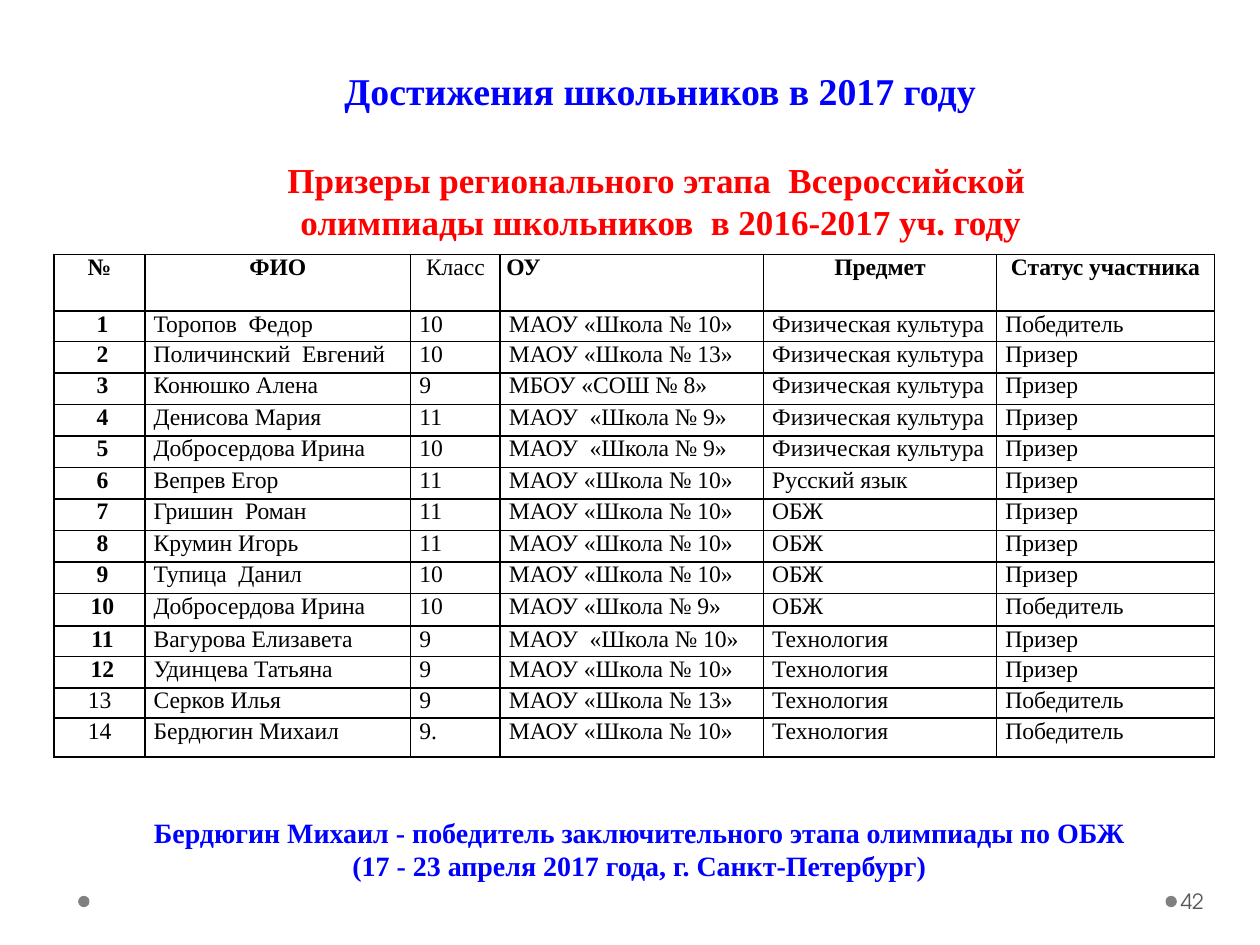
from lxml import etree
from pptx import Presentation
from pptx.dml.color import RGBColor
from pptx.enum.shapes import MSO_SHAPE
from pptx.enum.text import MSO_ANCHOR, PP_ALIGN
from pptx.oxml.ns import qn
from pptx.util import Inches, Pt

SERIF = "Times New Roman"
BLUE, RED, BLACK, WHITE = "0000FF", "FF0000", "000000", "FFFFFF"
SCHOOL_9, SCHOOL_10, SCHOOL_13 = "МАОУ «Школа № 9»", "МАОУ «Школа № 10»", "МАОУ «Школа № 13»"
SPORT, SAFETY, CRAFT = "Физическая культура", "ОБЖ", "Технология"
WINNER, RUNNER_UP = "Победитель", "Призер"

HEADINGS = ["№", "ФИО", "Класс", "ОУ", "Предмет", "Статус участника"]
PUPILS = [
    ("Торопов  Федор", "10", SCHOOL_10, SPORT, WINNER),
    ("Поличинский  Евгений", "10", SCHOOL_13, SPORT, RUNNER_UP),
    ("Конюшко Алена", "9", "МБОУ «СОШ № 8»", SPORT, RUNNER_UP),
    ("Денисова Мария", "11", "МАОУ  «Школа № 9»", SPORT, RUNNER_UP),
    ("Добросердова Ирина", "10", "МАОУ  «Школа № 9»", SPORT, RUNNER_UP),
    ("Вепрев Егор", "11", SCHOOL_10, "Русский язык", RUNNER_UP),
    ("Гришин  Роман", "11", SCHOOL_10, SAFETY, RUNNER_UP),
    ("Крумин Игорь", "11", SCHOOL_10, SAFETY, RUNNER_UP),
    ("Тупица  Данил", "10", SCHOOL_10, SAFETY, RUNNER_UP),
    ("Добросердова Ирина", "10", SCHOOL_9, SAFETY, WINNER),
    ("Вагурова Елизавета", "9", "МАОУ  «Школа № 10»", CRAFT, RUNNER_UP),
    ("Удинцева Татьяна", "9", SCHOOL_10, CRAFT, RUNNER_UP),
    ("Серков Илья", "9", SCHOOL_13, CRAFT, WINNER),
    ("Бердюгин Михаил", "9.", SCHOOL_10, CRAFT, WINNER),
]
COLUMN_WIDTHS = [0.72, 2.11, 0.71, 2.09, 1.85, 1.73]
ROW_HEIGHTS = [0.45, 0.24] + [0.25] * 8 + [0.26, 0.24, 0.25, 0.24, 0.31]
LAST_BOLD_NUMBER = 12


def color(value):
    """Turn a hex string into a colour."""
    return RGBColor.from_string(value)


def write(frame, text, size=13.5, fill=BLACK, bold=False, font=SERIF,
          align=PP_ALIGN.LEFT, line_spacing=None):
    """Write each line of text as a formatted paragraph."""
    for index, line in enumerate(text.split("\n")):
        paragraph = frame.add_paragraph() if index else frame.paragraphs[0]
        paragraph.alignment = align
        paragraph.line_spacing = line_spacing
        run = paragraph.add_run()
        run.text = line
        run.font.name = font
        run.font.size = Pt(size)
        run.font.bold = bold
        run.font.color.rgb = color(fill)


def add_text(slide, left, top, width, height, text, anchor=MSO_ANCHOR.TOP, **text_format):
    """Add a wrapping text box."""
    box = slide.shapes.add_textbox(Inches(left), Inches(top), Inches(width), Inches(height))
    box.text_frame.word_wrap = True
    box.text_frame.vertical_anchor = anchor
    write(box.text_frame, text, **text_format)
    return box


def add_dot(slide, left):
    """Add a grey footer dot."""
    dot = slide.shapes.add_shape(MSO_SHAPE.OVAL, Inches(left), Inches(7.11), Inches(0.09), Inches(0.09))
    dot.shadow.inherit = False
    dot.fill.solid()
    dot.fill.fore_color.rgb = color("808080")
    dot.line.fill.background()


def set_borders(cell):
    """Draw a thin black line on each side of a cell."""
    properties = cell._tc.get_or_add_tcPr()
    for position, side in enumerate(("a:lnL", "a:lnR", "a:lnT", "a:lnB")):
        line = etree.Element(qn(side), w=str(Pt(1)))
        fill = etree.SubElement(line, qn("a:solidFill"))
        etree.SubElement(fill, qn("a:srgbClr"), val=BLACK)
        properties.insert(position, line)


def fill_cell(cell, text, inset, **text_format):
    """Fill, frame and write one table cell."""
    cell.margin_left = cell.margin_right = Inches(inset)
    cell.margin_top = cell.margin_bottom = 0
    cell.fill.solid()
    cell.fill.fore_color.rgb = color(WHITE)
    set_borders(cell)
    write(cell.text_frame, text, **text_format)


def add_results(slide):
    """Add the table of olympiad prize winners."""
    table = slide.shapes.add_table(
        len(ROW_HEIGHTS), len(COLUMN_WIDTHS), Inches(0.43), Inches(2.02),
        Inches(sum(COLUMN_WIDTHS)), Inches(sum(ROW_HEIGHTS))).table
    table.horz_banding = False
    for column, width in zip(table.columns, COLUMN_WIDTHS):
        column.width = Inches(width)
    for row, height in zip(table.rows, ROW_HEIGHTS):
        row.height = Inches(height)
    for column, heading in enumerate(HEADINGS):
        fill_cell(table.cell(0, column), heading, 0.05, bold=heading != "Класс",
                  align=PP_ALIGN.LEFT if heading == "ОУ" else PP_ALIGN.CENTER)
    for number, pupil in enumerate(PUPILS, 1):
        bold = number <= LAST_BOLD_NUMBER
        label = f" {number}" if bold else str(number)
        fill_cell(table.cell(number, 0), label, 0.05, bold=bold, align=PP_ALIGN.CENTER)
        for column, value in enumerate(pupil, 1):
            fill_cell(table.cell(number, column), value, 0.07)


def add_page_number(slide):
    """Add the page number beside the right dot."""
    number = add_text(slide, 9.34, 6.95, 0.61, 0.4, "42", anchor=MSO_ANCHOR.MIDDLE,
                      size=12, fill="595959", font="TeX Gyre Adventor")
    number.text_frame.margin_left = Inches(0.03)
    number.text_frame.margin_right = Inches(0.05)


def main():
    """Build and save the slide."""
    deck = Presentation()
    deck.slide_width, deck.slide_height = Inches(10), Inches(7.5)
    slide = deck.slides.add_slide(deck.slide_layouts[6])
    for left in (9.25, 0.62):
        add_dot(slide, left)
    add_page_number(slide)
    heading = {"bold": True, "align": PP_ALIGN.CENTER}
    add_text(slide, 1.42, 0.16, 7.64, 0.79, "Достижения школьников в 2017 году",
             anchor=MSO_ANCHOR.BOTTOM, size=21.6, fill=BLUE, line_spacing=Pt(58), **heading)
    add_text(slide, 1.03, 1.21, 8.43, 0.78,
             "Призеры регионального этапа  Всероссийской \nолимпиады школьников  в 2016-2017 уч. году",
             size=20, fill=RED, **heading)
    add_results(slide)
    add_text(slide, 1.06, 6.42, 8.03, 0.62,
             "Бердюгин Михаил - победитель заключительного этапа олимпиады по ОБЖ "
             "(17 - 23 апреля 2017 года, г. Санкт-Петербург)",
             size=16, fill=BLUE, **heading)
    deck.save("out.pptx")


if __name__ == "__main__":
    main()
